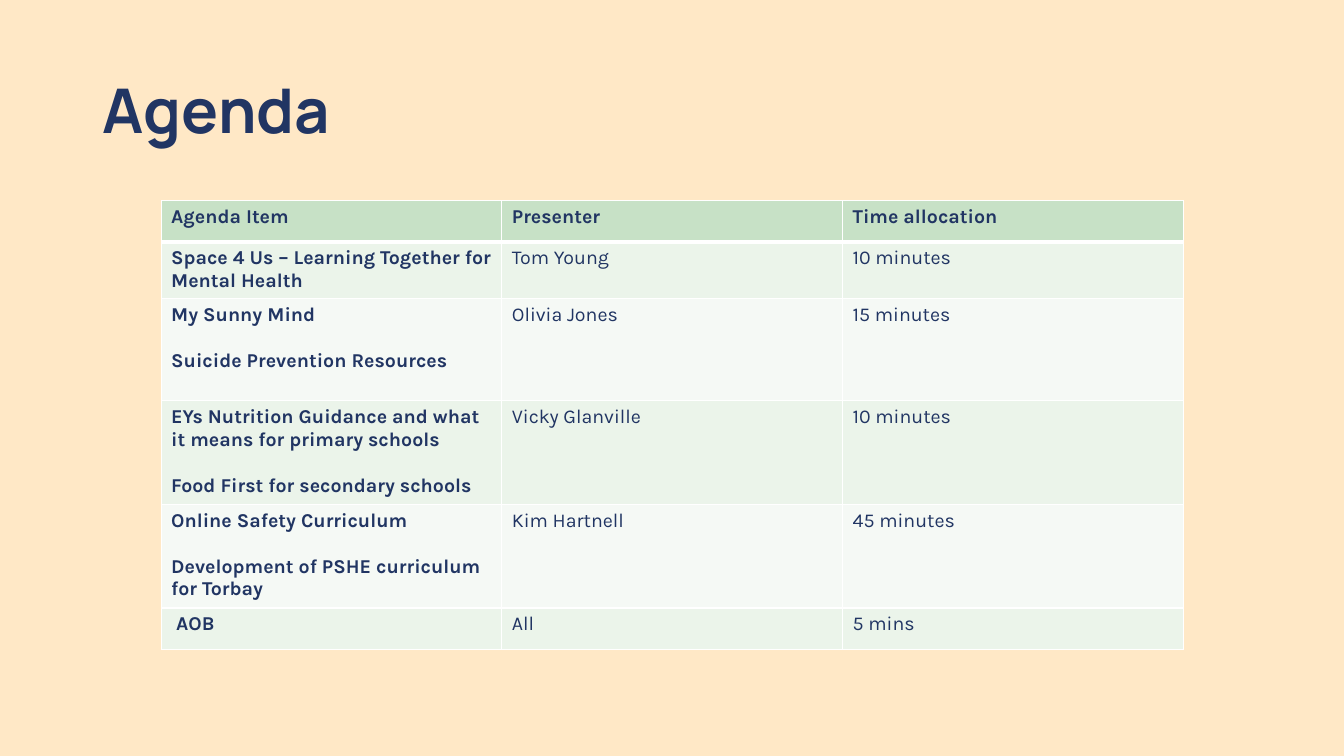
from dataclasses import dataclass

from lxml.etree import SubElement
from pptx import Presentation
from pptx.dml.color import RGBColor
from pptx.enum.text import MSO_ANCHOR
from pptx.oxml.ns import qn
from pptx.util import Cm, Pt


@dataclass(frozen=True)
class Theme:
    background: str = "FFE8C6"
    ink: str = "213563"
    header: str = "C7E1C6"
    bands: tuple = ("EBF4EA", "F5F9F5")
    border: str = "FFFFFF"
    title_font: str = "Manrope"
    body_font: str = "Karla"
    title_size: int = 44
    body_size: int = 14
    item_gap: float = 16.3
    thin: int = 1
    thick: int = 3


THEME = Theme()

HEADINGS = ("Agenda Item", "Presenter", "Time allocation")

# Items, presenter, time, row height in cm
AGENDA = (
    (("Space 4 Us – Learning Together for Mental Health",),
     "Tom Young", "10 minutes", 1.41),
    (("My Sunny Mind", "Suicide Prevention Resources"),
     "Olivia Jones", "15 minutes", 2.57),
    (("EYs Nutrition Guidance and what it means for primary schools",
      "Food First for secondary schools"),
     "Vicky Glanville", "10 minutes", 2.57),
    (("Online Safety Curriculum", "Development of PSHE curriculum for Torbay"),
     "Kim Hartnell", "45 minutes", 2.57),
    ((" AOB",), "All", "5 mins", 1.04),
)
HEADER_HEIGHT = 1.04


def add_span(para, text, font, size, bold):
    span = para.add_run()
    span.text = text
    span.font.name = font
    span.font.size = Pt(size)
    span.font.bold = bold
    span.font.color.rgb = RGBColor.from_string(THEME.ink)


def add_title(page, text, left, top, width, height):
    box = page.shapes.add_textbox(Cm(left), Cm(top), Cm(width), Cm(height))
    frame = box.text_frame
    frame.word_wrap = True
    frame.vertical_anchor = MSO_ANCHOR.MIDDLE
    para = frame.paragraphs[0]
    para.line_spacing = 0.9
    add_span(para, text, THEME.title_font, THEME.title_size, True)


def set_borders(cell, top, bottom):
    properties = cell._tc.get_or_add_tcPr()
    sides = (("L", THEME.thin), ("R", THEME.thin), ("T", top), ("B", bottom))
    for side, points in sides:
        line = SubElement(properties, qn(f"a:ln{side}"), w=str(int(Pt(points))))
        fill = SubElement(line, qn("a:solidFill"))
        SubElement(fill, qn("a:srgbClr"), val=THEME.border)


def fill_cell(cell, texts, bold, color, top, bottom):
    set_borders(cell, top, bottom)
    cell.fill.solid()
    cell.fill.fore_color.rgb = RGBColor.from_string(color)
    frame = cell.text_frame
    for index, text in enumerate(texts):
        para = frame.add_paragraph() if index else frame.paragraphs[0]
        if index:
            para.space_before = Pt(THEME.item_gap)
        add_span(para, text, THEME.body_font, THEME.body_size, bold)


def add_agenda(page, left, top, width):
    heights = [HEADER_HEIGHT] + [entry[-1] for entry in AGENDA]
    frame = page.shapes.add_table(len(heights), len(HEADINGS), Cm(left), Cm(top),
                                  Cm(width), Cm(sum(heights)))
    table = frame.table
    for column in table.columns:
        column.width = Cm(width / len(HEADINGS))
    for row, height in zip(table.rows, heights):
        row.height = Cm(height)

    # Header row
    for column, heading in enumerate(HEADINGS):
        fill_cell(table.cell(0, column), (heading,), True, THEME.header,
                  THEME.thin, THEME.thick)

    # Banded agenda rows, with the items in bold
    for row, (items, presenter, time, _) in enumerate(AGENDA, start=1):
        color = THEME.bands[(row - 1) % len(THEME.bands)]
        upper = THEME.thick if row == 1 else THEME.thin
        for column, texts in enumerate((items, (presenter,), (time,))):
            fill_cell(table.cell(row, column), texts, column == 0, color,
                      upper, THEME.thin)


def main():
    deck = Presentation()
    deck.slide_width, deck.slide_height = Cm(33.87), Cm(19.05)
    page = deck.slides.add_slide(deck.slide_layouts[6])
    page.background.fill.solid()
    page.background.fill.fore_color.rgb = RGBColor.from_string(THEME.background)
    add_title(page, "Agenda", 2.34, 1.02, 29.21, 3.68)
    add_agenda(page, 4.06, 5.05, 25.76)
    deck.save("out.pptx")


if __name__ == "__main__":
    main()
